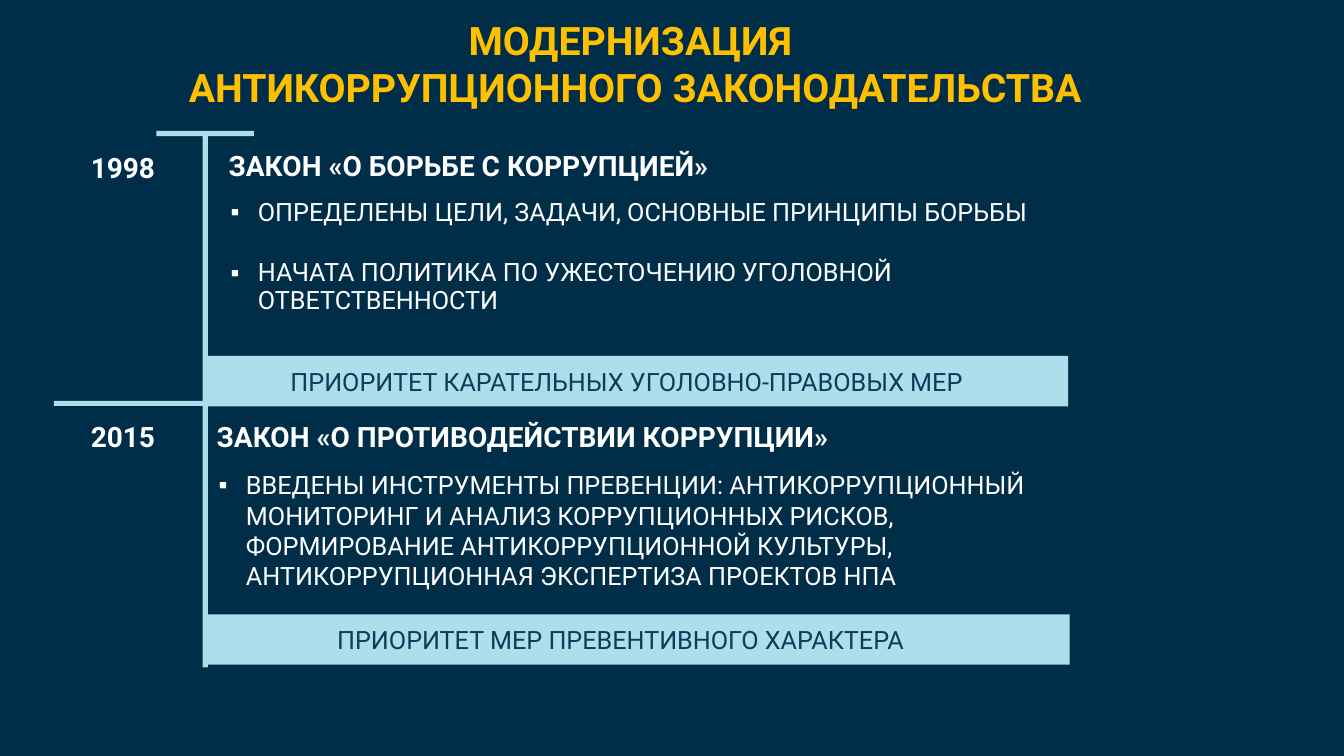
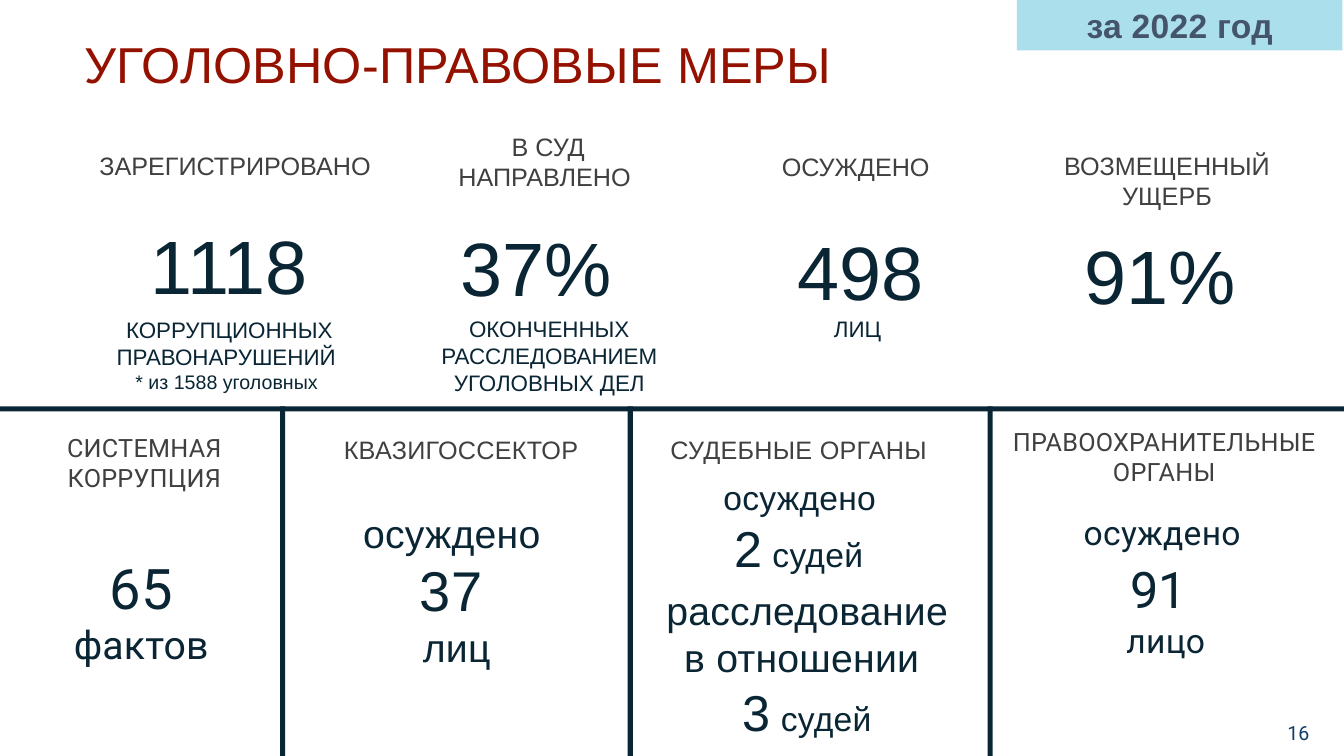
from lxml import etree
from pptx import Presentation
from pptx.dml.color import RGBColor
from pptx.enum.shapes import MSO_SHAPE
from pptx.enum.text import MSO_ANCHOR, PP_ALIGN
from pptx.oxml.ns import qn
from pptx.util import Cm, Pt

LEFT, CENTER, RIGHT = PP_ALIGN.LEFT, PP_ALIGN.CENTER, PP_ALIGN.RIGHT
TOP, MIDDLE = MSO_ANCHOR.TOP, MSO_ANCHOR.MIDDLE
RECTANGLE = MSO_SHAPE.RECTANGLE

NAVY = RGBColor(0x00, 0x2D, 0x48)
SKY = RGBColor(0xAB, 0xDF, 0xEB)
GOLD = RGBColor(0xFF, 0xC0, 0x00)
WHITE = RGBColor(0xFF, 0xFF, 0xFF)
BLUE = RGBColor(0x11, 0x3A, 0x5B)
INK = RGBColor(0x0A, 0x25, 0x34)
GRAY = RGBColor(0x40, 0x40, 0x40)
RED = RGBColor(0x94, 0x11, 0x00)
SLATE = RGBColor(0x44, 0x54, 0x6A)
PAGE_BLUE = RGBColor(0x0F, 0x3F, 0x68)

SLIDE_W, SLIDE_H = 33.87, 19.05
RULE = 0.13
BAND_H = 1.27

REFORM_TITLE = ["МОДЕРНИЗАЦИЯ ", "АНТИКОРРУПЦИОННОГО ЗАКОНОДАТЕЛЬСТВА"]
LAWS = [
    {
        "year": "1998", "year_box": (1.59, 3.68, 3.02, 1.12),
        "name": "ЗАКОН «О БОРЬБЕ С КОРРУПЦИЕЙ»", "box": (5.51, 3.63, 20.98, 5.26),
        "points": ["ОПРЕДЕЛЕНЫ ЦЕЛИ, ЗАДАЧИ, ОСНОВНЫЕ ПРИНЦИПЫ БОРЬБЫ",
                   "НАЧАТА ПОЛИТИКА ПО УЖЕСТОЧЕНИЮ УГОЛОВНОЙ ОТВЕТСТВЕННОСТИ"],
        "line": 0.9, "after": 12,
        "priority": "ПРИОРИТЕТ КАРАТЕЛЬНЫХ УГОЛОВНО-ПРАВОВЫХ МЕР",
        "band": (5.23, 8.97, 21.69, BAND_H), "band_inset": 0.81,
    },
    {
        "year": "2015", "year_box": (1.59, 10.44, 3.02, 1.12),
        "name": "ЗАКОН «О ПРОТИВОДЕЙСТВИИ КОРРУПЦИИ»", "box": (5.21, 10.44, 21.74, 4.7),
        "points": ["ВВЕДЕНЫ ИНСТРУМЕНТЫ ПРЕВЕНЦИИ: АНТИКОРРУПЦИОННЫЙ МОНИТОРИНГ "
                   "И АНАЛИЗ КОРРУПЦИОННЫХ РИСКОВ, ФОРМИРОВАНИЕ АНТИКОРРУПЦИОННОЙ "
                   "КУЛЬТУРЫ, АНТИКОРРУПЦИОННАЯ ЭКСПЕРТИЗА ПРОЕКТОВ НПА"],
        "line": 1.0, "after": 0,
        "priority": "ПРИОРИТЕТ МЕР ПРЕВЕНТИВНОГО ХАРАКТЕРА",
        "band": (5.14, 15.48, 21.82, BAND_H), "band_inset": 1.06,
    },
]
TIMELINE = [
    (5.11, 3.38, RULE, 13.44),
    (3.94, 3.3, 2.46, RULE),
    (1.36, 10.1, 25.25, RULE),
]

LABELS = [
    (["ЗАРЕГИСТРИРОВАНО"], (2.18, 3.66, 7.49, 1.02), "Arial", 0),
    (["В СУД НАПРАВЛЕНО "], (10.46, 3.18, 6.71, 1.8), "Arial", 0),
    (["ОСУЖДЕНО"], (17.78, 3.68, 7.57, 1.02), "Arial", 0),
    (["ВОЗМЕЩЕННЫЙ УЩЕРБ"], (25.93, 3.66, 6.96, 1.8), "Arial", 0),
    (["СИСТЕМНАЯ", "КОРРУПЦИЯ"], (0.14, 10.77, 7, 1.8), "Roboto", 20),
    (["КВАЗИГОССЕКТОР"], (6.02, 10.82, 11.2, 1.02), "Arial", 20),
    (["СУДЕБНЫЕ ОРГАНЫ"], (14.48, 10.82, 11.3, 1.02), "Arial", 20),
    (["ПРАВООХРАНИТЕЛЬНЫЕ", "ОРГАНЫ"], (24.89, 10.62, 8.9, 1.8), "Roboto", 20),
]
TOTALS = [
    ([[("1118", 54)]],
     ["КОРРУПЦИОННЫХ", "ПРАВОНАРУШЕНИЙ ", [("* из 1588 уголовных ", 14)]],
     5, (2.62, 5.38, 6.32, 4.7)),
    ([[("37%", 54), (" ", 66)]],
     ["ОКОНЧЕННЫХ РАССЛЕДОВАНИЕМ", "УГОЛОВНЫХ ДЕЛ"],
     0, (8.84, 5.03, 10.01, 5.13)),
    ([[("498", 54)]], ["ЛИЦ "], 0, (19.43, 5.54, 4.52, 3.25)),
    ([[("91%", 54)]], [], 0, (27.05, 5.64, 4.37, 2.57)),
]
SECTORS = [
    ([[("65", 40)], [("фактов", 28)]], (0.16, 13.82, 6.8, 3.18), "Roboto"),
    ([[("осуждено", 28), (" ", 24)], [("37", 40), (" ", 28)], [("лиц", 28)]],
     (6.58, 12.7, 9.86, 4.37), "Arial"),
    ([[("осуждено", 24), (" ", 20)], [("2", 36), (" судей ", 24)]],
     (16.38, 11.89, 7.75, 2.82), "Arial"),
    ([[("расследование", 28)], [("в отношении ", 28)], [("3", 36), (" судей", 24)]],
     (15.06, 14.66, 10.57, 4.2), "Arial"),
    ([[("осуждено", 24), (" ", 20)], [("91", 36), (" ", 40)], [("лицо", 24)]],
     (25.1, 12.78, 8.56, 4.01), "Roboto"),
]
GRID_TOP = 10.24
DIVIDERS = [7.06, 15.82, 24.89]


def write(tf, paragraphs, font="Roboto", size=18, color=WHITE, bold=False, align=LEFT,
          line=1.0, before=0, after=0, first_before=0, spacing=0, bullet=None):
    for i, content in enumerate(paragraphs):
        p = tf.paragraphs[-1]
        if p.runs:
            p = tf.add_paragraph()
        p.alignment = align
        p.line_spacing = line
        p.space_before = Pt(before if i else before + first_before)
        p.space_after = Pt(after)
        if bullet:
            pPr = p._p.get_or_add_pPr()
            pPr.set("marL", str(Cm(0.74)))
            pPr.set("indent", str(Cm(-0.69)))
            etree.SubElement(pPr, qn("a:buFont")).set("typeface", "Arial")
            etree.SubElement(pPr, qn("a:buChar")).set("char", bullet)
        runs = [(content, size)] if isinstance(content, str) else content
        for text, run_size in runs:
            r = p.add_run()
            r.text = text
            r.font.name = font
            r.font.size = Pt(run_size)
            r.font.bold = bold
            r.font.color.rgb = color
            if spacing:
                r._r.get_or_add_rPr().set("spc", str(spacing))


def add_text(s, box, paragraphs, anchor=TOP, **fmt):
    tf = s.shapes.add_textbox(*map(Cm, box)).text_frame
    tf.word_wrap = True
    tf.vertical_anchor = anchor
    write(tf, paragraphs, **fmt)
    return tf


def add_bar(s, box, color):
    sp = s.shapes.add_shape(RECTANGLE, *map(Cm, box))
    sp.shadow.inherit = False
    sp.fill.solid()
    sp.fill.fore_color.rgb = color
    sp.line.fill.background()
    return sp


def add_slide(prs, background, title, box, **fmt):
    s = prs.slides.add_slide(prs.slide_layouts[5])
    s.background.fill.solid()
    s.background.fill.fore_color.rgb = background
    sp = s.shapes.title
    sp.left, sp.top, sp.width, sp.height = map(Cm, box)
    sp.text_frame.word_wrap = True
    sp.text_frame.vertical_anchor = TOP
    write(sp.text_frame, title, **fmt)
    return s


def build_reform(prs):
    s = add_slide(prs, NAVY, REFORM_TITLE, (3.38, 0.28, 25.25, 2.64),
                  size=28, color=GOLD, bold=True, align=CENTER)
    for box in TIMELINE:
        add_bar(s, box, SKY)
    for law in LAWS:
        add_text(s, law["year_box"], [law["year"]], size=20, bold=True, align=CENTER)
        tf = add_text(s, law["box"], [law["name"]], size=20, bold=True)
        write(tf, law["points"], line=law["line"], before=12, after=law["after"], bullet="▪")
        tf = add_bar(s, law["band"], SKY).text_frame
        tf.margin_right = Cm(law["band_inset"])
        write(tf, [law["priority"]], color=BLUE, align=CENTER)


def build_measures(prs):
    s = add_slide(prs, WHITE, ["УГОЛОВНО-ПРАВОВЫЕ МЕРЫ"], (1.88, 0.71, 23.85, 1.8),
                  font="Arial", size=36, color=RED, spacing=10)
    add_bar(s, (0, GRID_TOP, SLIDE_W, RULE), INK)
    for x in DIVIDERS:
        add_bar(s, (x, GRID_TOP, RULE, SLIDE_H - GRID_TOP), INK)
    for lines, box, font, spacing in LABELS:
        add_text(s, box, lines, font=font, color=GRAY, align=CENTER, spacing=spacing)
    for value, caption, gap, box in TOTALS:
        tf = add_text(s, box, value, font="Arial", color=INK, align=CENTER)
        write(tf, caption, font="Arial", size=16, color=INK, align=CENTER, first_before=gap)
    for lines, box, font in SECTORS:
        add_text(s, box, lines, font=font, color=INK, align=CENTER, spacing=20)
    add_text(s, (25.63, 17.96, 7.62, 1.02), ["16"], anchor=MIDDLE,
             size=14, color=PAGE_BLUE, align=RIGHT)
    period = add_bar(s, (25.63, 0, 8.2, BAND_H), SKY)
    write(period.text_frame, ["за 2022 год"], font="Arial", size=24, color=SLATE,
          bold=True, align=CENTER, spacing=20)


def main():
    prs = Presentation()
    prs.slide_width, prs.slide_height = Cm(SLIDE_W), Cm(SLIDE_H)
    build_reform(prs)
    build_measures(prs)
    prs.save("out.pptx")


if __name__ == "__main__":
    main()
